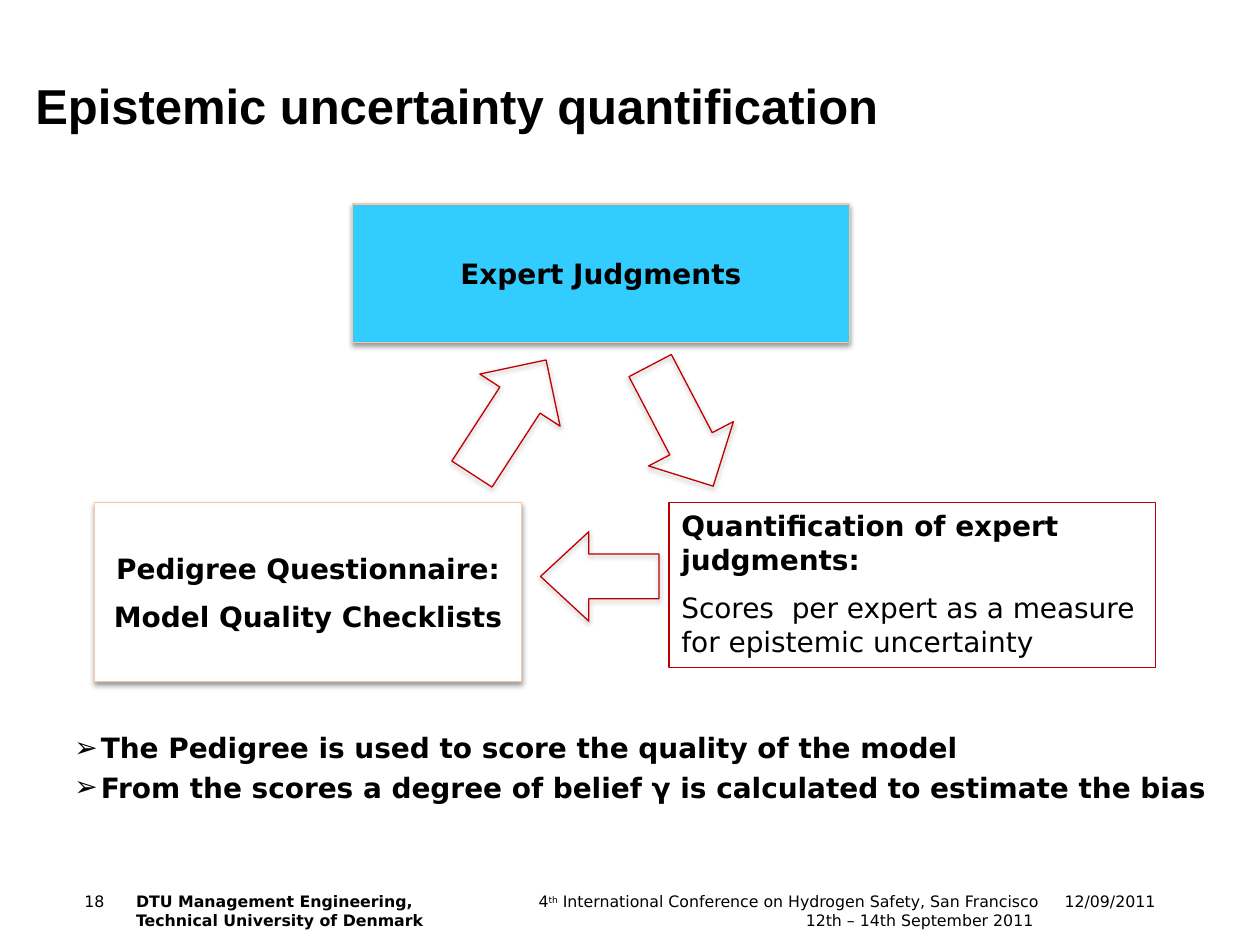
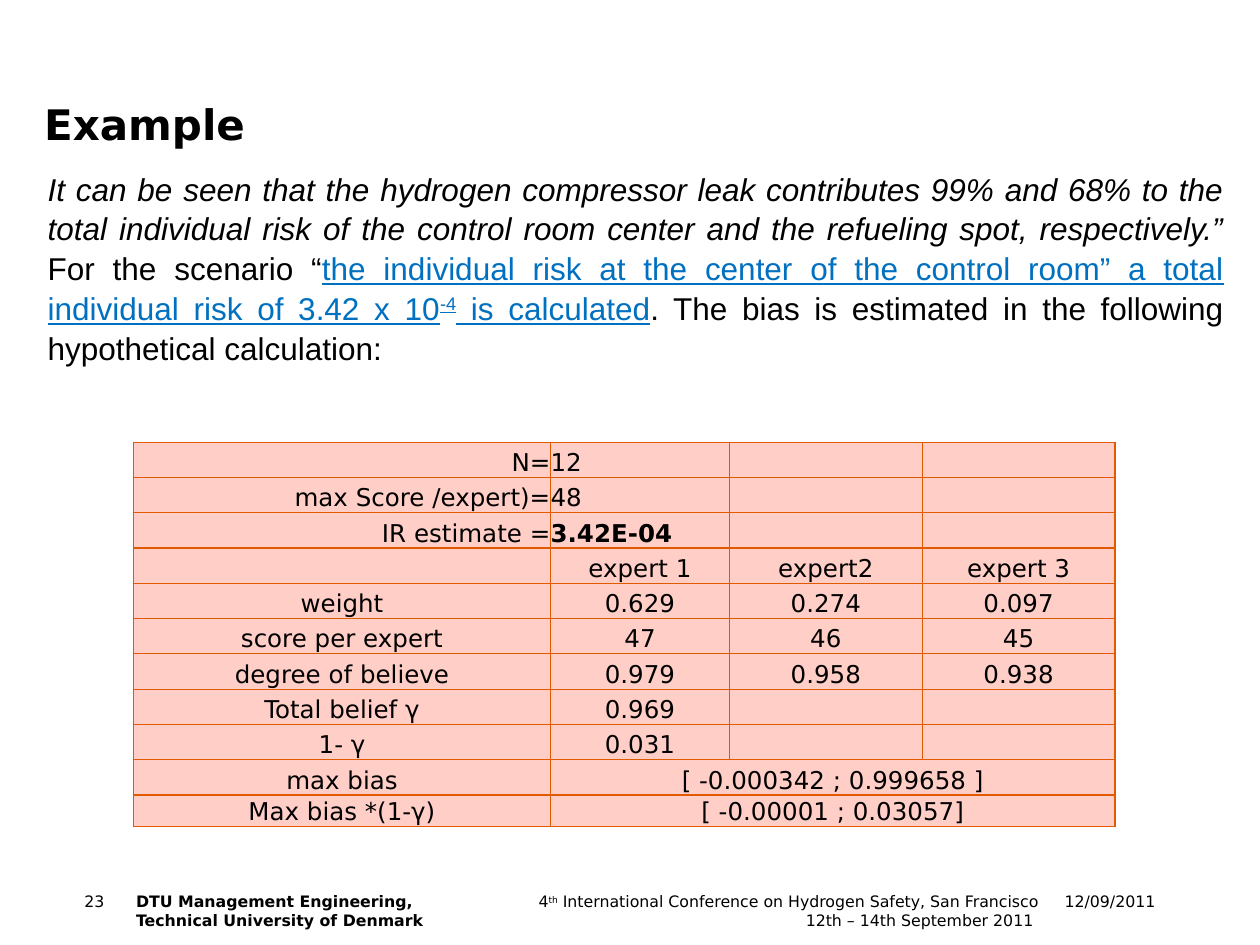
"""Build two slides on epistemic uncertainty in hydrogen risk analysis."""
from dataclasses import dataclass, field
from typing import Any, Optional

from lxml import etree
from pptx import Presentation
from pptx.dml.color import RGBColor
from pptx.enum.shapes import MSO_SHAPE
from pptx.enum.text import MSO_ANCHOR, MSO_AUTO_SIZE, PP_ALIGN
from pptx.oxml.ns import qn
from pptx.util import Inches, Pt

LEFT, CENTER, RIGHT, JUSTIFY = PP_ALIGN.LEFT, PP_ALIGN.CENTER, PP_ALIGN.RIGHT, PP_ALIGN.JUSTIFY
TOP, MIDDLE, BOTTOM = MSO_ANCHOR.TOP, MSO_ANCHOR.MIDDLE, MSO_ANCHOR.BOTTOM
NO_AUTOFIT = MSO_AUTO_SIZE.NONE
RECTANGLE, UP_ARROW, LEFT_ARROW = MSO_SHAPE.RECTANGLE, MSO_SHAPE.UP_ARROW, MSO_SHAPE.LEFT_ARROW

COLORS = {
    "text": "000000",
    "highlight": "0070C0",
    "judgments": "33CCFF",
    "white": "FFFFFF",
    "box_line": "FBC5A4",
    "red_line": "C00000",
    "table_line": "E25A00",
    "table_fill": "FFCEC7",
}
SANS, ARIAL = "DejaVu Sans", "Arial"
TITLE_ONLY_LAYOUT, CONTENT_LAYOUT = 5, 1
LINE_WIDTH = Pt(0.75)
Box = tuple[float, float, float, float]


@dataclass
class Run:
    """A stretch of text with its own format."""

    text: str
    format: dict[str, Any] = field(default_factory=dict)
    color: str = "text"
    raised: bool = False


@dataclass
class TextStyle:
    """Format shared by all text in one frame."""

    size: float
    name: str = SANS
    bold: bool = False
    align: Any = LEFT
    anchor: Any = TOP
    gap: float = 0
    line_spacing: Optional[float] = None
    inset: Optional[float] = 0
    bullet: str = ""


@dataclass
class Node:
    """A rectangle or block arrow of the judgment cycle."""

    kind: Any
    box: Box
    line: str = "red_line"
    fill: Optional[str] = None
    shadow: bool = True
    rotation: float = 0
    adjustments: tuple[float, ...] = ()
    paragraphs: tuple[tuple[Run, ...], ...] = ()
    style: Optional[TextStyle] = None


@dataclass
class FooterItem:
    """One text of the footer band."""

    left: float
    width: float
    paragraphs: tuple[tuple[Run, ...], ...]
    style: TextStyle


def rgb(color: str) -> RGBColor:
    """Look up a palette colour."""
    return RGBColor.from_string(COLORS[color])


def inches(box: Box) -> list[Any]:
    """Convert a box to lengths."""
    return [Inches(value) for value in box]


def add_run(paragraph: Any, run: Run, style: TextStyle) -> None:
    """Append one formatted run."""
    added = paragraph.add_run()
    added.text = run.text
    values = {"size": Pt(style.size), "name": style.name, "bold": style.bold} | run.format
    for name, value in values.items():
        setattr(added.font, name, value)
    added.font.color.rgb = rgb(run.color)
    if run.raised:
        added._r.get_or_add_rPr().set("baseline", "30000")


def add_bullet(paragraph: Any, character: str) -> None:
    """Give a paragraph a hanging bullet."""
    properties = paragraph._p.get_or_add_pPr()
    indent = Inches(0.21)
    properties.set("marL", str(indent))
    properties.set("indent", str(-indent))
    etree.SubElement(properties, qn("a:buChar")).set("char", character)


def write(frame: Any, paragraphs: tuple[tuple[Run, ...], ...], style: TextStyle) -> None:
    """Fill a text frame with styled paragraphs."""
    settings = {"word_wrap": True, "auto_size": NO_AUTOFIT, "vertical_anchor": style.anchor}
    if style.inset is not None:
        for side in ("left", "top", "right", "bottom"):
            settings[f"margin_{side}"] = Inches(style.inset)
    for name, value in settings.items():
        setattr(frame, name, value)
    for index, runs in enumerate(paragraphs):
        paragraph = frame.add_paragraph() if index else frame.paragraphs[0]
        if style.bullet:
            add_bullet(paragraph, style.bullet)
        paragraph.alignment = style.align
        paragraph.space_before = Pt(style.gap if index else 0)
        if style.line_spacing:
            paragraph.line_spacing = style.line_spacing
        for run in runs:
            add_run(paragraph, run, style)


def fill_placeholder(shape: Any, box: Box, paragraphs: tuple[tuple[Run, ...], ...],
                     style: TextStyle) -> None:
    """Move a placeholder and write its text."""
    shape.left, shape.top, shape.width, shape.height = inches(box)
    write(shape.text_frame, paragraphs, style)


def add_text(slide: Any, box: Box, paragraphs: tuple[tuple[Run, ...], ...],
             style: TextStyle) -> None:
    """Add a text box."""
    write(slide.shapes.add_textbox(*inches(box)).text_frame, paragraphs, style)


def add_footer(slide: Any, number: int) -> None:
    """Add the footer band shared by all slides."""
    plain, bold = TextStyle(9), TextStyle(9, bold=True)
    right = TextStyle(9, align=RIGHT)
    conference = (
        Run("4"), Run("th", raised=True),
        Run(" International Conference on Hydrogen Safety, San Francisco "
            "12th – 14th September 2011 "),
    )
    department = ((Run("DTU Management Engineering,"),),
                  (Run("Technical University of Denmark"),))
    items = (
        FooterItem(8.33, 0.84, ((Run("12/09/2011"),),), right),
        FooterItem(4.13, 4.11, (conference,), right),
        FooterItem(0.67, 0.33, ((Run(str(number)),),), plain),
        FooterItem(1.08, 4.04, department, bold),
    )
    for item in items:
        add_text(slide, (item.left, 7.08, item.width, 0.33), item.paragraphs, item.style)


def start_slide(presentation: Any, layout: int, number: int, title: str, box: Box,
                style: TextStyle) -> Any:
    """Add a slide with its title and footer."""
    slide = presentation.slides.add_slide(presentation.slide_layouts[layout])
    add_footer(slide, number)
    fill_placeholder(slide.shapes.title, box, ((Run(title),),), style)
    return slide


def add_shadow(shape: Any) -> None:
    """Put a soft shadow below a shape."""
    effects = shape._element.spPr.find(qn("a:effectLst"))
    shadow = etree.SubElement(effects, qn("a:outerShdw"))
    values = {"blurRad": Pt(3.1), "dist": Pt(1.6), "dir": 90 * 60000, "rotWithShape": 0}
    for name, value in values.items():
        shadow.set(name, str(value))
    color = etree.SubElement(shadow, qn("a:srgbClr"))
    color.set("val", COLORS["text"])
    etree.SubElement(color, qn("a:alpha")).set("val", "38000")


def add_node(slide: Any, node: Node) -> None:
    """Draw one part of the judgment cycle."""
    shape = slide.shapes.add_shape(node.kind, *inches(node.box))
    shape.rotation = node.rotation
    for index, value in enumerate(node.adjustments):
        shape.adjustments[index] = value
    if node.fill:
        shape.fill.solid()
        shape.fill.fore_color.rgb = rgb(node.fill)
    else:
        shape.fill.background()
    shape.line.color.rgb = rgb(node.line)
    shape.line.width = LINE_WIDTH
    shape.shadow.inherit = False
    if node.shadow:
        add_shadow(shape)
    if node.style:
        write(shape.text_frame, node.paragraphs, node.style)


def style_cell(cell: Any) -> None:
    """Set the borders and fill of a table cell."""
    properties = cell._tc.get_or_add_tcPr()
    for side in ("L", "R", "T", "B"):
        line = etree.SubElement(properties, qn(f"a:ln{side}"))
        line.set("w", str(LINE_WIDTH))
        fill = etree.SubElement(line, qn("a:solidFill"))
        etree.SubElement(fill, qn("a:srgbClr")).set("val", COLORS["table_line"])
    cell.fill.solid()
    cell.fill.fore_color.rgb = rgb("table_fill")


def add_bias_table(slide: Any) -> None:
    """Add the table of expert scores and bias."""
    rows = (
        ("N=", "12"), ("max Score /expert)=", "48"), ("IR estimate =", "3.42E-04"),
        ("", "expert 1", "expert2", "expert 3"),
        ("weight", "0.629", "0.274", "0.097"),
        ("score per expert", "47", "46", "45"),
        ("degree of believe", "0.979", "0.958", "0.938"),
        ("Total belief γ", "0.969"), ("1- γ", "0.031"),
        ("max bias", "[ -0.000342 ; 0.999658 ]"),
        ("Max bias *(1-γ)", "[ -0.00001 ; 0.03057]"),
    )
    widths = (3.31, 1.42, 1.53, 1.53)
    parameter_rows, first_range_row, size = 3, 9, 14
    box = (1.06, 3.51, sum(widths), 3.05)
    table = slide.shapes.add_table(len(rows), len(widths), *inches(box)).table
    table.first_row = table.horz_banding = False
    for column, width in zip(table.columns, widths):
        column.width = Inches(width)
    for index, texts in enumerate(rows):
        table.rows[index].height = Inches(0.25 if index == len(rows) - 1 else 0.28)
        if index >= first_range_row:
            table.cell(index, 1).merge(table.cell(index, len(widths) - 1))
        for column in range(len(widths)):
            cell = table.cell(index, column)
            style_cell(cell)
            for side in ("left", "top", "right", "bottom"):
                setattr(cell, f"margin_{side}", 0)
            cell.vertical_anchor = BOTTOM
            paragraph = cell.text_frame.paragraphs[0]
            text = texts[column] if column < len(texts) else ""
            if not text:
                paragraph._p.get_or_add_endParaRPr().set("sz", str(size * 100))
                continue
            paragraph.alignment = CENTER
            if index < parameter_rows:
                paragraph.alignment = LEFT if column else RIGHT
            add_run(paragraph, Run(text), TextStyle(size, bold=text == "3.42E-04"))


def build_quantification(presentation: Any) -> None:
    """Build the slide with the judgment cycle."""
    slide = start_slide(presentation, CONTENT_LAYOUT, 18, "Epistemic uncertainty quantification",
                        (0.28, 0.44, 9, 0.63), TextStyle(28, ARIAL, True, anchor=BOTTOM))
    conclusions = ((Run("The Pedigree is used to score the quality of the model"),),
                   (Run("From the scores a degree of belief γ is calculated "
                        "to estimate the bias"),))
    fill_placeholder(slide.placeholders[1], (0.59, 5.8, 9, 1.02), conclusions,
                     TextStyle(16, bold=True, gap=3.5, bullet="➢"))
    centered = TextStyle(16, bold=True, align=CENTER, anchor=MIDDLE, gap=8.5, inset=None)
    plain = TextStyle(16, bold=True, gap=8.5, inset=None)
    scores = Run("Scores  per expert as a measure for epistemic uncertainty", {"bold": False})
    nodes = (
        Node(RECTANGLE, (2.8, 1.62, 3.94, 1.1), "box_line", "judgments",
             paragraphs=((Run("Expert Judgments"),),), style=centered),
        Node(RECTANGLE, (0.75, 3.99, 3.39, 1.42), "box_line", "white",
             paragraphs=((Run("Pedigree Questionnaire:"),), (Run("Model Quality Checklists"),)),
             style=centered),
        Node(UP_ARROW, (3.66, 2.77, 0.76, 1.08), rotation=33),
        Node(RECTANGLE, (5.31, 3.99, 3.86, 1.31), shadow=False,
             paragraphs=((Run("Quantification of expert judgments:"),), (scores,)), style=plain),
        Node(LEFT_ARROW, (4.29, 4.22, 0.94, 0.71), adjustments=(0.5, 0.54)),
        Node(UP_ARROW, (5.03, 2.84, 0.76, 1.08), rotation=152.4),
    )
    for node in nodes:
        add_node(slide, node)


def build_example(presentation: Any) -> None:
    """Build the slide with the worked example."""
    slide = start_slide(presentation, TITLE_ONLY_LAYOUT, 23, "Example", (0.35, 0.68, 8.5, 0.5),
                        TextStyle(24, bold=True, anchor=BOTTOM))
    add_bias_table(slide)
    underlined = {"underline": True}
    scenario = (
        Run("It can be seen that the hydrogen compressor leak contributes 99% and 68% to the total "
            "individual risk of the control room center and the refueling spot, respectively.” ",
            {"italic": True}),
        Run("For the scenario “"),
        Run("the individual risk at the center of the control room” a total individual risk "
            "of 3.42 x 10", underlined, "highlight"),
        Run("-4", underlined, "highlight", True),
        Run(" is calculated", underlined, "highlight"),
        Run(". The bias is estimated in the following hypothetical calculation:"),
    )
    add_text(slide, (0.28, 1.31, 9.53, 1.62), (scenario,),
             TextStyle(18, ARIAL, align=JUSTIFY, anchor=MIDDLE, line_spacing=1.05, inset=None))


def main() -> None:
    """Build and save the presentation."""
    presentation = Presentation()
    presentation.slide_width, presentation.slide_height = Inches(10), Inches(7.5)
    build_quantification(presentation)
    build_example(presentation)
    presentation.save("out.pptx")


if __name__ == "__main__":
    main()
